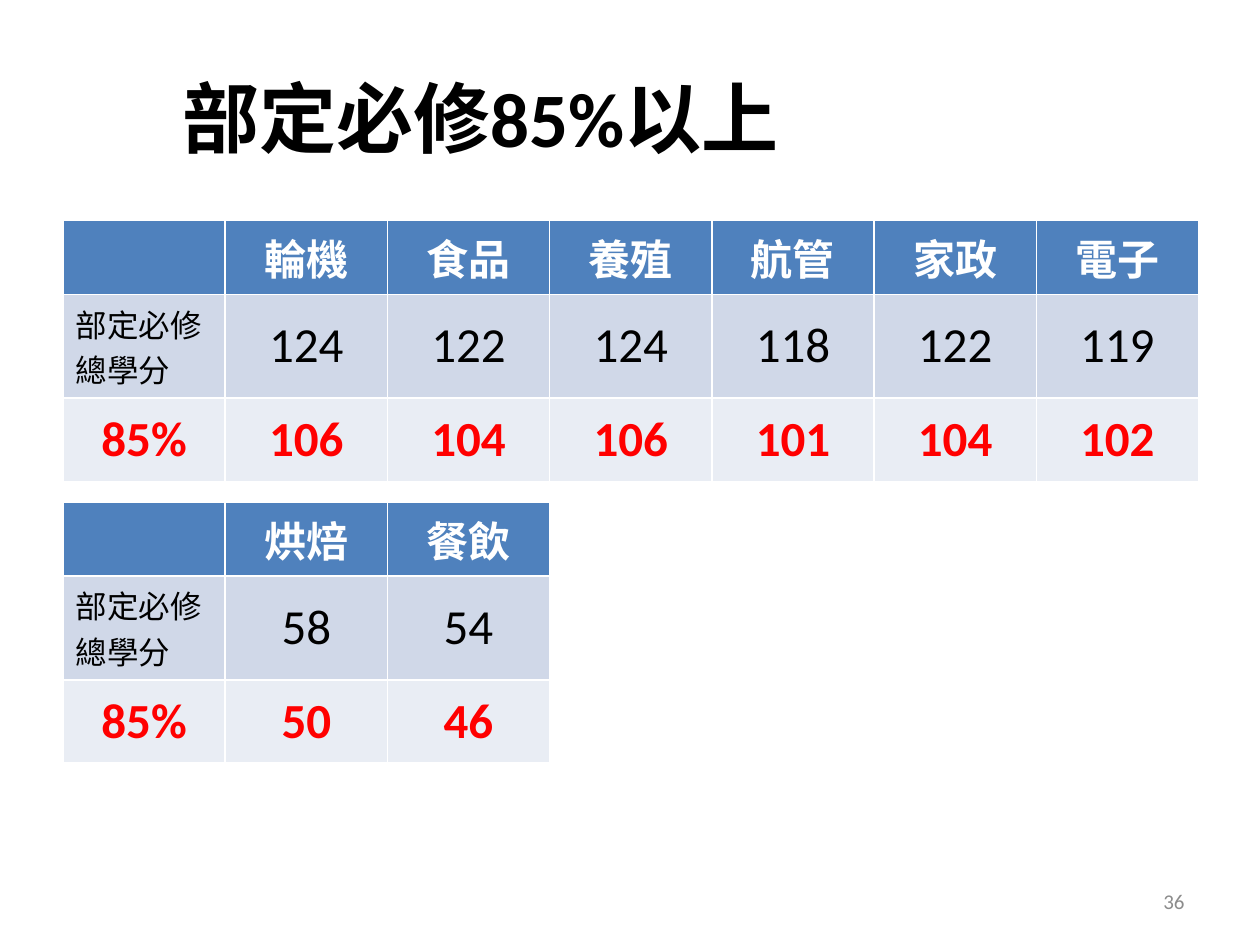
from pptx import Presentation
from pptx.dml.color import RGBColor
from pptx.enum.text import MSO_ANCHOR, PP_ALIGN
from pptx.util import Cm, Pt

BLACK = RGBColor(0x00, 0x00, 0x00)
WHITE = RGBColor(0xFF, 0xFF, 0xFF)
RED = RGBColor(0xFF, 0x00, 0x00)
GREY = RGBColor(0x8C, 0x8C, 0x8C)
HEADER_BLUE = RGBColor(0x4F, 0x81, 0xBD)
BAND_DARK = RGBColor(0xD0, 0xD8, 0xE8)
BAND_LIGHT = RGBColor(0xE9, 0xED, 0xF4)

LEFT = Cm(1.27)
COLUMN_WIDTH = Cm(3.27)
# height, fill, text colour, size, bold
ROW_STYLES = [
    (Cm(1.27), HEADER_BLUE, WHITE, 24, True),
    (Cm(2.01), BAND_DARK, BLACK, 28, False),
    (Cm(1.68), BAND_LIGHT, RED, 28, True),
]
CREDITS_LABEL = "部定必修\n總學分"
CREDIT_TABLES = [
    (Cm(4.45), [
        ["", "輪機", "食品", "養殖", "航管", "家政", "電子"],
        [CREDITS_LABEL, "124", "122", "124", "118", "122", "119"],
        ["85%", "106", "104", "106", "101", "104", "102"],
    ]),
    (Cm(10.13), [
        ["", "烘焙", "餐飲"],
        [CREDITS_LABEL, "58", "54"],
        ["85%", "50", "46"],
    ]),
]


def format_text(text_frame, size, color, bold, align):
    text_frame.word_wrap = True
    for paragraph in text_frame.paragraphs:
        paragraph.alignment = align
        for run in paragraph.runs:
            run.font.name = "Calibri"
            run.font.size = Pt(size)
            run.font.bold = bold
            run.font.color.rgb = color


prs = Presentation()
prs.slide_width, prs.slide_height = Cm(25.4), Cm(19.05)
slide = prs.slides.add_slide(prs.slide_layouts[5])

title = slide.shapes.title
title.left, title.top, title.width, title.height = LEFT, Cm(0.76), Cm(16.84), Cm(3.18)
title.text_frame.text = "部定必修85%以上"
title.text_frame.vertical_anchor = MSO_ANCHOR.MIDDLE
format_text(title.text_frame, 44, BLACK, True, PP_ALIGN.CENTER)

for top, rows in CREDIT_TABLES:
    column_count = len(rows[0])
    table_height = sum(style[0] for style in ROW_STYLES)
    credits = slide.shapes.add_table(
        len(rows), column_count, LEFT, top, COLUMN_WIDTH * column_count, table_height
    ).table
    for column in credits.columns:
        column.width = COLUMN_WIDTH
    for r, (values, style) in enumerate(zip(rows, ROW_STYLES)):
        height, fill, color, size, bold = style
        credits.rows[r].height = height
        for c, value in enumerate(values):
            cell = credits.cell(r, c)
            cell.fill.solid()
            cell.fill.fore_color.rgb = fill
            cell.text_frame.text = value
            if value == CREDITS_LABEL:
                format_text(cell.text_frame, 18, color, bold, PP_ALIGN.LEFT)
            else:
                cell.vertical_anchor = MSO_ANCHOR.MIDDLE
                format_text(cell.text_frame, size, color, bold, PP_ALIGN.CENTER)

page_number = slide.shapes.add_textbox(Cm(18.2), Cm(17.66), Cm(5.93), Cm(1.01))
page_number.text_frame.text = "36"
page_number.text_frame.vertical_anchor = MSO_ANCHOR.MIDDLE
format_text(page_number.text_frame, 12, GREY, False, PP_ALIGN.RIGHT)

prs.save("out.pptx")
